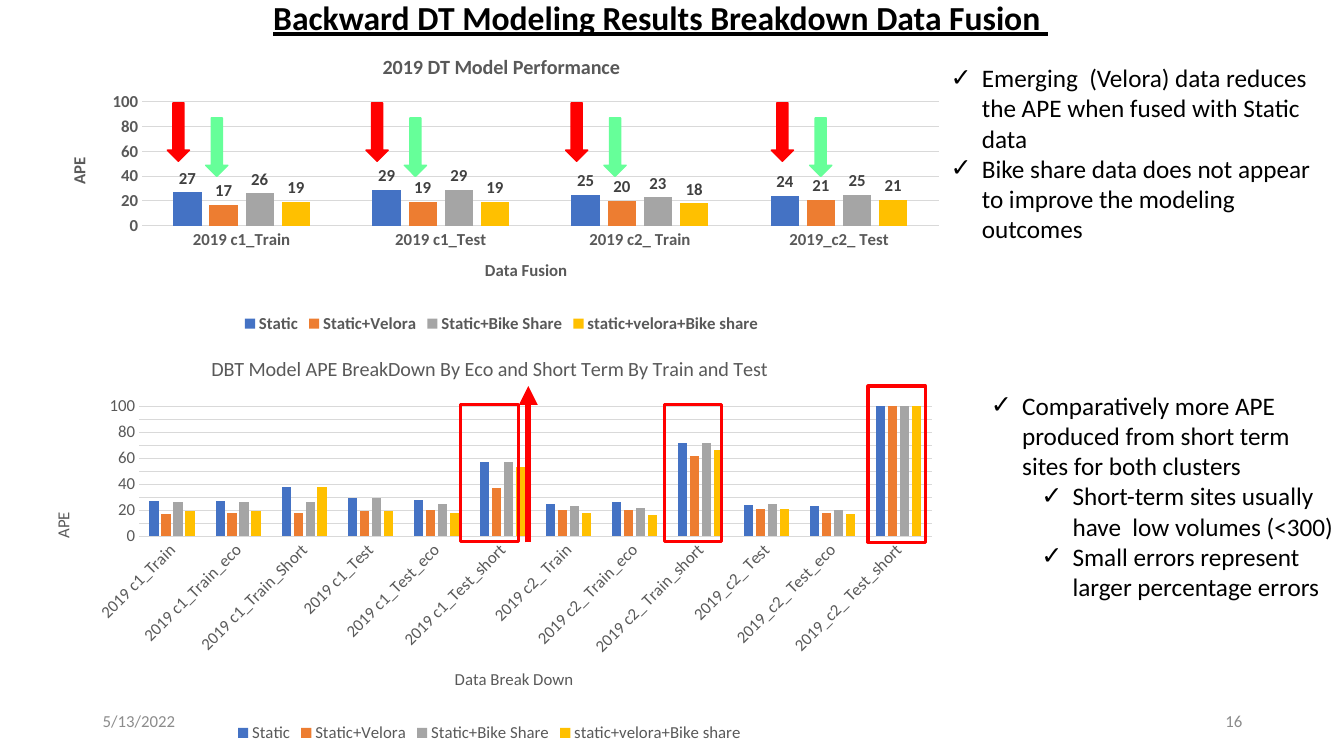
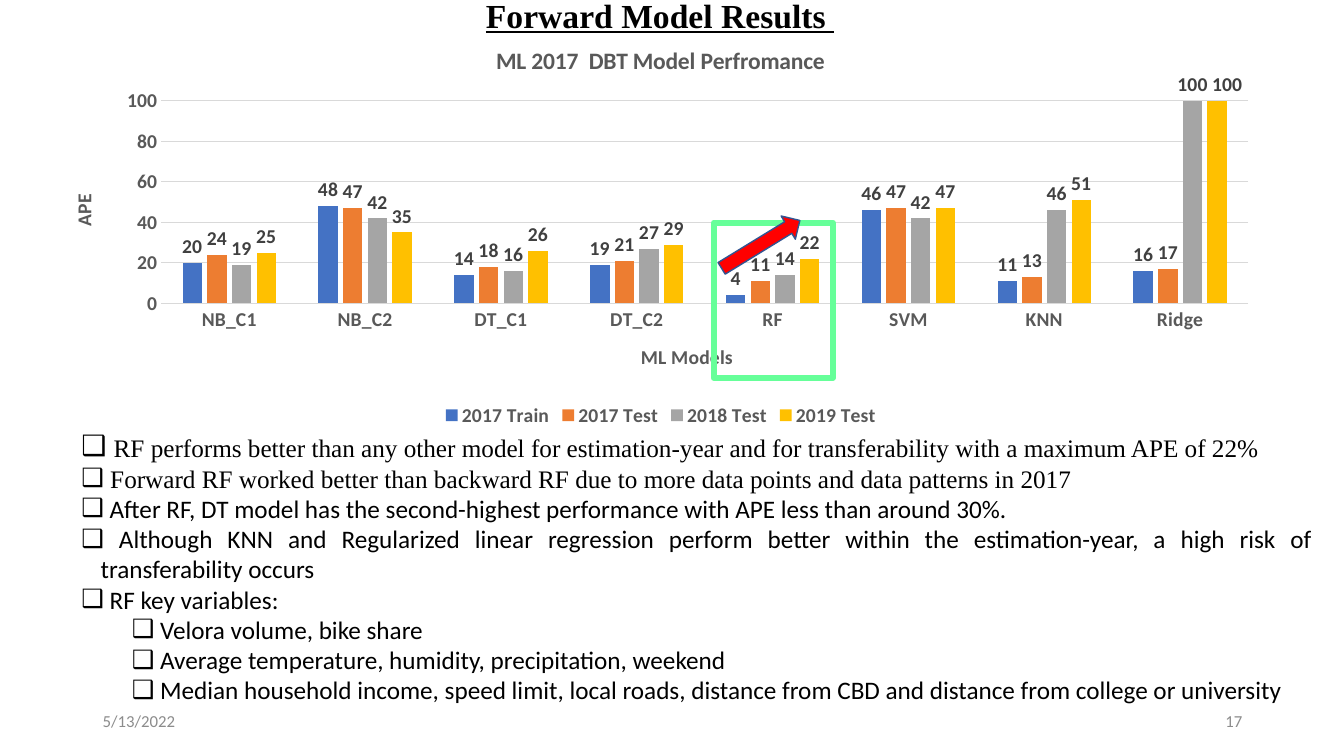
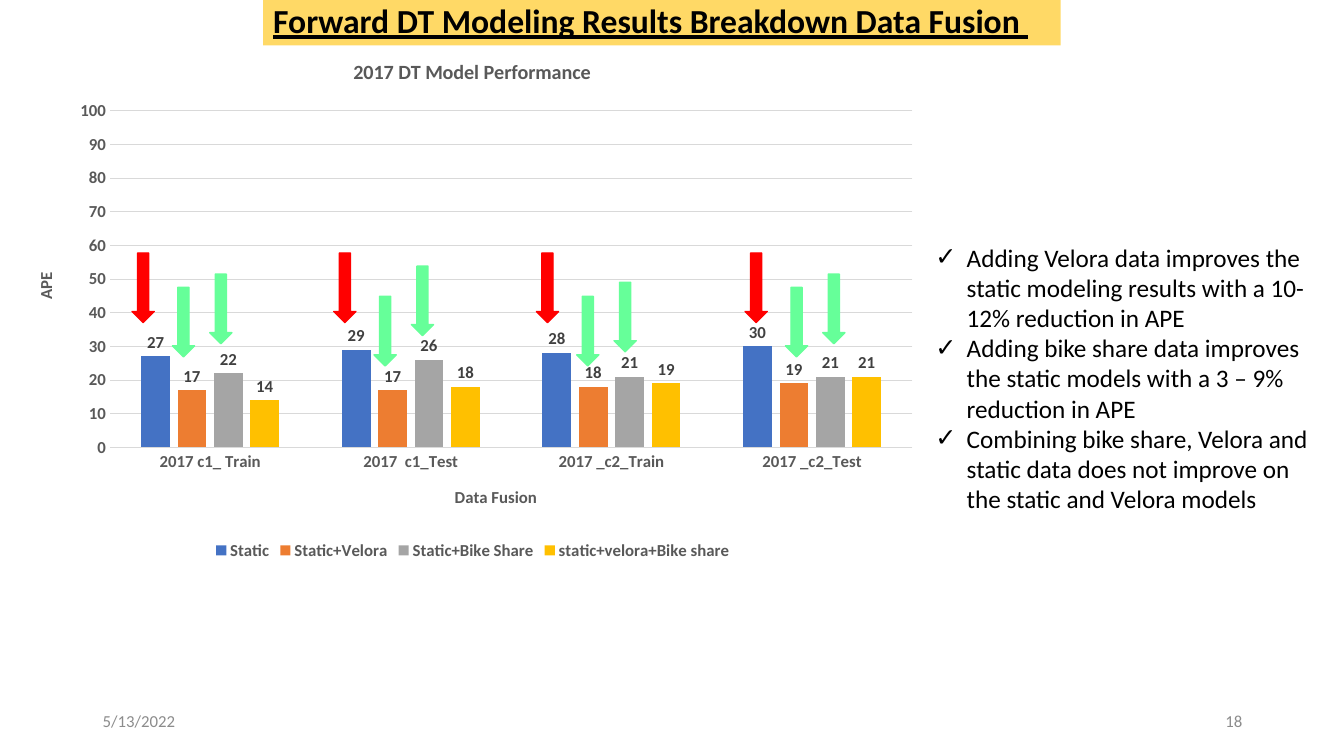
import dataclasses
import typing

import lxml.etree
import pptx
import pptx.chart.data
import pptx.dml.color
import pptx.enum.chart
import pptx.enum.shapes
import pptx.enum.text
import pptx.oxml
import pptx.oxml.ns
import pptx.util

Inches = pptx.util.Inches
Pt = pptx.util.Pt
qn = pptx.oxml.ns.qn
Align = pptx.enum.text.PP_ALIGN
Preset = pptx.enum.shapes.MSO_SHAPE
OUTSIDE_END = pptx.enum.chart.XL_LABEL_POSITION.OUTSIDE_END


@dataclasses.dataclass(frozen=True)
class Theme:
    ink: str = "000000"
    footer: str = "8C8C8C"
    axis: str = "595959"
    label: str = "404040"
    grid: str = "D9D9D9"
    red: str = "FF0000"
    green: str = "66FF99"
    navy: str = "325491"
    band: str = "FFD966"
    series: tuple[str, ...] = ("4472C4", "ED7D31", "A5A5A5", "FFC000")
    sans: str = "Calibri"
    serif: str = "Times New Roman"
    title_size: float = 24
    body_size: float = 18
    lead_size: float = 20
    small_size: float = 12
    chart_title_scale: float = 1.2


THEME = Theme()


class Area(typing.NamedTuple):
    left: float
    top: float
    width: float
    height: float


class Spot(typing.NamedTuple):
    left: float
    top: float


class Bullet(typing.NamedTuple):
    text: str
    level: int = 0
    font: str = THEME.sans
    lead: str = ""


class LabelShift(typing.NamedTuple):
    series: int
    point: int
    right: float


@dataclasses.dataclass(frozen=True)
class ColumnChart:
    area: Area
    plot: Area
    title: str
    title_at: Spot
    category_title: str
    category_title_at: Spot
    value_title_at: Spot
    categories: tuple[str, ...]
    series: dict[str, tuple[int, ...]]
    major_unit: int
    size: float = THEME.small_size
    bold: bool = True
    labels: bool = True
    slanted: bool = False
    label_shifts: tuple[LabelShift, ...] = ()


def rgb(code: str) -> pptx.dml.color.RGBColor:
    return pptx.dml.color.RGBColor.from_string(code)


def lengths(area: Area) -> list[int]:
    return [Inches(value) for value in area]


def style_font(font, *, size: float, color: str, name: str = THEME.sans,
               bold: bool = False, underline: bool = False) -> None:
    font.size = Pt(size)
    font.name = name
    font.bold = bold
    font.underline = underline
    font.color.rgb = rgb(color)


def add_span(para, text: str, **format) -> None:
    span = para.add_run()
    span.text = text
    style_font(span.font, **format)


def prepare_frame(frame, anchor=pptx.enum.text.MSO_ANCHOR.TOP) -> None:
    frame.word_wrap = True
    frame.auto_size = pptx.enum.text.MSO_AUTO_SIZE.NONE
    frame.vertical_anchor = anchor


def add_text(page, area: Area, text: str, *, align=Align.LEFT, **format) -> None:
    box = page.shapes.add_textbox(*lengths(area))
    prepare_frame(box.text_frame, pptx.enum.text.MSO_ANCHOR.MIDDLE)
    para = box.text_frame.paragraphs[0]
    para.alignment = align
    add_span(para, text, **format)


def add_page(deck, number: int, title: str, area: Area, *,
             font: str = THEME.sans, band: str | None = None):
    page = deck.slides.add_slide(deck.slide_layouts[5])
    box = page.shapes.title
    box.left, box.top, box.width, box.height = lengths(area)
    prepare_frame(box.text_frame)
    if band:
        box.fill.solid()
        box.fill.fore_color.rgb = rgb(band)
    para = box.text_frame.paragraphs[0]
    para.alignment = Align.LEFT
    add_span(para, title, size=THEME.title_size, color=THEME.ink, name=font,
             bold=True, underline=True)
    for left, text, align in ((0.92, "5/13/2022", Align.LEFT),
                              (9.42, str(number), Align.RIGHT)):
        add_text(page, Area(left, 6.95, 3, 0.4), text, align=align,
                 size=THEME.small_size, color=THEME.footer)
    return page


def add_bullets(page, area: Area, bullets: list[Bullet], *, mark: str = "✓",
                indent: float = 0.31, align=Align.LEFT) -> None:
    box = page.shapes.add_textbox(*lengths(area))
    frame = box.text_frame
    prepare_frame(frame)
    for index, bullet in enumerate(bullets):
        para = frame.add_paragraph() if index else frame.paragraphs[0]
        para.alignment = align
        para.level = bullet.level
        properties = para._p.get_or_add_pPr()
        properties.set("marL", str(Inches(indent + bullet.level * 0.5)))
        properties.set("indent", str(Inches(-indent)))
        lxml.etree.SubElement(properties, qn("a:buFont")).set("typeface", THEME.sans)
        lxml.etree.SubElement(properties, qn("a:buChar")).set("char", mark)
        if bullet.lead:
            add_span(para, bullet.lead, size=THEME.lead_size, color=THEME.ink,
                     name=bullet.font)
        add_span(para, bullet.text, size=THEME.body_size, color=THEME.ink,
                 name=bullet.font)


def add_mark(page, preset, area: Area, *, line: str, fill: str | None = None,
             weight: float = 1, rotation: float = 0) -> None:
    shape = page.shapes.add_shape(preset, *lengths(area))
    shape.shadow.inherit = False
    shape.rotation = rotation
    shape.line.color.rgb = rgb(line)
    shape.line.width = Pt(weight)
    if fill:
        shape.fill.solid()
        shape.fill.fore_color.rgb = rgb(fill)
    else:
        shape.fill.background()


def add_down_arrows(page, spots: list[Spot], height: float, color: str) -> None:
    for spot in spots:
        add_mark(page, Preset.DOWN_ARROW, Area(*spot, 0.22, height),
                 line=color, fill=color)


def add_arrow(page, start: Spot, end: Spot, *, color: str, weight: float) -> None:
    arrow = page.shapes.add_connector(
        pptx.enum.shapes.MSO_CONNECTOR.STRAIGHT,
        *[Inches(value) for value in (*start, *end)])
    arrow.line.color.rgb = rgb(color)
    arrow.line.width = Pt(weight)
    lxml.etree.SubElement(arrow.line._get_or_add_ln(), qn("a:tailEnd")).set("type", "triangle")
    lxml.etree.SubElement(arrow._element.spPr, qn("a:effectLst"))


def make_layout(settings: dict[str, str | float]):
    layout = pptx.oxml.parse_xml(
        '<c:layout xmlns:c="http://schemas.openxmlformats.org/drawingml/2006/chart">'
        "<c:manualLayout/></c:layout>")
    for tag, value in settings.items():
        text = value if isinstance(value, str) else f"{value:.4f}"
        lxml.etree.SubElement(layout[0], qn(f"c:{tag}")).set("val", text)
    return layout


def place_layout(chart_area: Area, place: Area | Spot):
    settings = {"xMode": "edge", "yMode": "edge",
                "x": (place.left - chart_area.left) / chart_area.width,
                "y": (place.top - chart_area.top) / chart_area.height}
    if isinstance(place, Area):
        settings = {"layoutTarget": "inner", **settings,
                    "w": place.width / chart_area.width,
                    "h": place.height / chart_area.height}
    return make_layout(settings)


def drop_layout(parent) -> None:
    for layout in parent.findall(qn("c:layout")):
        parent.remove(layout)


def place_title(title, text: str, chart_area: Area, spot: Spot, **format) -> None:
    add_span(title.text_frame.paragraphs[0], text, color=THEME.axis, **format)
    element = title._element
    drop_layout(element)
    element.find(qn("c:tx")).addnext(place_layout(chart_area, spot))


def style_axis(axis, data: ColumnChart) -> None:
    axis.major_tick_mark = pptx.enum.chart.XL_TICK_MARK.NONE
    axis.minor_tick_mark = pptx.enum.chart.XL_TICK_MARK.NONE
    style_font(axis.tick_labels.font, size=data.size, color=THEME.axis, bold=data.bold)


def shift_label(plot, data: ColumnChart, shift: LabelShift) -> None:
    series = plot.series[shift.series]
    label = series.points[shift.point].data_label
    style_font(label.font, size=data.size, color=THEME.label, bold=True)
    label.position = OUTSIDE_END
    index = next(series._element.iter(qn("c:dLbl"))).find(qn("c:idx"))
    index.addnext(make_layout({"x": shift.right / data.area.width, "y": 0}))


def add_column_chart(page, data: ColumnChart) -> None:
    source = pptx.chart.data.CategoryChartData()
    source.categories = data.categories
    for name, values in data.series.items():
        source.add_series(name, values)
    chart = page.shapes.add_chart(
        pptx.enum.chart.XL_CHART_TYPE.COLUMN_CLUSTERED, *lengths(data.area), source).chart
    style_font(chart.font, size=data.size, color=THEME.ink, bold=data.bold)
    space = chart._chartSpace
    space.find(qn("c:chart")).addnext(pptx.oxml.parse_xml(
        '<c:spPr xmlns:c="http://schemas.openxmlformats.org/drawingml/2006/chart"'
        ' xmlns:a="http://schemas.openxmlformats.org/drawingml/2006/main">'
        "<a:noFill/><a:ln><a:noFill/></a:ln></c:spPr>"))

    category, value = chart.category_axis, chart.value_axis
    for axis in (category, value):
        style_axis(axis, data)
    category.format.line.color.rgb = rgb(THEME.grid)
    category.format.line.width = Pt(0.75)
    if data.slanted:
        category._element.find(f"{qn('c:txPr')}/{qn('a:bodyPr')}").set("rot", "-2700000")
    value.format.line.fill.background()
    value.minimum_scale = 0
    value.maximum_scale = 100
    value.major_unit = data.major_unit
    value.has_major_gridlines = True
    value.major_gridlines.format.line.color.rgb = rgb(THEME.grid)
    value.major_gridlines.format.line.width = Pt(0.75)

    chart.has_title = True
    for title, text, spot, scale in (
            (chart.chart_title, data.title, data.title_at, THEME.chart_title_scale),
            (category.axis_title, data.category_title, data.category_title_at, 1),
            (value.axis_title, "APE", data.value_title_at, 1)):
        place_title(title, text, data.area, spot, size=data.size * scale, bold=data.bold)
    turn = next(value.axis_title._element.iter(qn("a:bodyPr")))
    turn.set("rot", "-5400000")
    turn.set("vert", "horz")

    chart.has_legend = True
    chart.legend.position = pptx.enum.chart.XL_LEGEND_POSITION.BOTTOM
    chart.legend.include_in_layout = False
    style_font(chart.legend.font, size=data.size, color=THEME.axis, bold=data.bold)

    plot = chart.plots[0]
    plot.gap_width = 219
    plot.overlap = -27
    plot.vary_by_categories = False
    for series, color in zip(plot.series, THEME.series):
        series.format.fill.solid()
        series.format.fill.fore_color.rgb = rgb(color)
        if data.labels:
            labels = series.data_labels
            labels.show_value = True
            labels.position = OUTSIDE_END
            labels.number_format = "#,##0"
            labels.number_format_is_linked = False
            style_font(labels.font, size=data.size, color=THEME.label, bold=True)
    for shift in data.label_shifts:
        shift_label(plot, data, shift)
    plot_area = space.find(f"{qn('c:chart')}/{qn('c:plotArea')}")
    drop_layout(plot_area)
    plot_area.insert(0, place_layout(data.area, data.plot))


FUSIONS = ("Static", "Static+Velora", "Static+Bike Share", "static+velora+Bike share")
YEARS = ("2017 Train", "2017 Test", "2018 Test", "2019 Test")


def build_backward_fusion(deck) -> None:
    page = add_page(deck, 16, "Backward DT Modeling Results Breakdown Data Fusion ",
                    Area(2.61, -0.08, 7.96, 0.5))
    add_column_chart(page, ColumnChart(
        area=Area(0.3, 3.35, 9.11, 4.06), plot=Area(1.38, 4.03, 7.86, 1.29),
        title="DBT Model APE BreakDown By Eco and Short Term By Train and Test",
        title_at=Spot(2.06, 3.49),
        category_title="Data Break Down", category_title_at=Spot(4.48, 6.59),
        value_title_at=Spot(0.48, 5.05),
        categories=("2019 c1_Train", "2019 c1_Train_eco", "2019 c1_Train_Short",
                    "2019 c1_Test", "2019 c1_Test_eco", "2019 c1_Test_short",
                    "2019 c2_ Train", "2019 c2_ Train_eco", "2019 c2_ Train_short",
                    "2019_c2_ Test", "2019_c2_ Test_eco", "2019_c2_ Test_short"),
        series=dict(zip(FUSIONS, (
            (27, 27, 38, 29, 28, 57, 25, 26, 72, 24, 23, 100),
            (17, 18, 18, 19, 20, 37, 20, 20, 62, 21, 18, 100),
            (26, 26, 26, 29, 25, 57, 23, 22, 72, 25, 20, 100),
            (19, 19, 38, 19, 18, 53, 18, 16, 66, 21, 17, 100)))),
        major_unit=10, bold=False, labels=False, slanted=True))
    for left, top, height in ((4.57, 4.01, 1.36), (6.59, 4.01, 1.36), (8.61, 3.83, 1.55)):
        add_mark(page, Preset.RECTANGLE, Area(left, top, 0.57, height),
                 line=THEME.red, weight=2.25)
    add_arrow(page, Spot(5.24, 5.38), Spot(5.24, 3.83), color=THEME.red, weight=4.5)
    add_column_chart(page, ColumnChart(
        area=Area(0.46, 0.38, 9.03, 2.97), plot=Area(1.41, 1.01, 7.9, 1.23),
        title="2019 DT Model Performance", title_at=Spot(3.76, 0.49),
        category_title="Data Fusion", category_title_at=Spot(4.78, 2.54),
        value_title_at=Spot(0.64, 1.53),
        categories=("2019 c1_Train", "2019 c1_Test", "2019 c2_ Train", "2019_c2_ Test"),
        series=dict(zip(FUSIONS, ((27, 29, 25, 24), (17, 19, 20, 21),
                                  (26, 29, 23, 25), (19, 19, 18, 21)))),
        major_unit=20))
    lefts = (1.66, 3.63, 5.61, 7.65)
    add_down_arrows(page, [Spot(left, 1.02) for left in lefts], 0.58, THEME.red)
    add_down_arrows(page, [Spot(left + 0.38, 1.17) for left in lefts], 0.58, THEME.green)
    add_bullets(page, Area(9.33, 0.57, 4.01, 1.92), [
        Bullet("Emerging  (Velora) data reduces the APE when fused with Static data"),
        Bullet("Bike share data does not appear to improve the modeling outcomes")])
    add_bullets(page, Area(9.73, 3.82, 3.6, 2.52), [
        Bullet("Comparatively more APE produced from short term sites for both clusters"),
        Bullet("Short-term sites usually have  low volumes (<300)", 1),
        Bullet("Small errors represent larger percentage errors", 1)])


def build_forward_results(deck) -> None:
    page = add_page(deck, 17, "Forward Model Results ", Area(4.72, -0.1, 3.69, 0.5),
                    font=THEME.serif)
    add_bullets(page, Area(0.71, 4.21, 12.41, 2.86), [
        Bullet("RF performs better than any other model for estimation-year and for "
               "transferability with a maximum APE of 22%", font=THEME.serif, lead=" "),
        Bullet(" Forward RF worked better than backward RF due to more data points and "
               "data patterns in 2017", font=THEME.serif),
        Bullet(" After RF, DT model has the second-highest performance with APE less "
               "than around 30%."),
        Bullet(" Although KNN and Regularized linear regression perform better within "
               "the estimation-year, a high risk of transferability occurs"),
        Bullet(" RF key variables:"),
        Bullet(" Velora volume, bike share", 1),
        Bullet(" Average temperature, humidity, precipitation, weekend", 1),
        Bullet(" Median household income, speed limit, local roads, distance from CBD "
               "and distance from college or university", 1)],
        mark="❑", indent=0.19, align=Align.JUSTIFY)
    add_column_chart(page, ColumnChart(
        area=Area(0.48, 0.28, 12.15, 4), plot=Area(1.6, 1, 10.78, 2.01),
        title="ML 2017  DBT Model Perfromance", title_at=Spot(4.88, 0.4),
        category_title="ML Models", category_title_at=Spot(6.32, 3.37),
        value_title_at=Spot(0.66, 1.89),
        categories=("NB_C1", "NB_C2", "DT_C1", "DT_C2", "RF", "SVM", "KNN", "Ridge"),
        series=dict(zip(YEARS, (
            (20, 48, 14, 19, 4, 46, 11, 16), (24, 47, 18, 21, 11, 47, 13, 17),
            (19, 42, 16, 27, 14, 42, 46, 100), (25, 35, 26, 29, 22, 47, 51, 100)))),
        major_unit=20, size=14, label_shifts=(LabelShift(3, 7, 0.1),)))
    add_mark(page, Preset.RECTANGLE, Area(7.08, 2.21, 1.18, 1.54),
             line=THEME.green, weight=4.5)
    add_mark(page, Preset.RIGHT_ARROW, Area(7.09, 2.29, 0.91, 0.27),
             line=THEME.navy, fill=THEME.red, rotation=328.5)


def build_forward_fusion(deck) -> None:
    page = add_page(deck, 18, "Forward DT Modeling Results Breakdown Data Fusion ",
                    Area(2.61, -0.05, 7.91, 0.5), band=THEME.band)
    add_column_chart(page, ColumnChart(
        area=Area(0.15, 0.38, 9.08, 5.22), plot=Area(1.09, 1.1, 7.96, 3.34),
        title="2017 DT Model Performance", title_at=Spot(3.47, 0.54),
        category_title="Data Fusion", category_title_at=Spot(4.48, 4.79),
        value_title_at=Spot(0.31, 2.67),
        categories=("2017 c1_ Train", "2017  c1_Test", "2017 _c2_Train", "2017 _c2_Test"),
        series=dict(zip(FUSIONS, ((27, 29, 28, 30), (17, 17, 18, 19),
                                  (22, 26, 21, 21), (14, 18, 19, 21)))),
        major_unit=10))
    add_bullets(page, Area(9.18, 2.35, 4.01, 2.83), [
        Bullet("Adding Velora data improves the static modeling results with a 10-12% "
               "reduction in APE"),
        Bullet("Adding bike share data improves the static models with a 3 – 9% "
               "reduction in APE"),
        Bullet("Combining bike share, Velora and static data does not improve on the "
               "static and Velora models")])
    lefts = (1.31, 3.31, 5.32, 7.39)
    add_down_arrows(page, [Spot(left, 2.51) for left in lefts], 0.69, THEME.red)
    for offset, tops in ((0.4, (2.85, 2.94, 2.94, 2.85)), (0.77, (2.72, 2.64, 2.8, 2.72))):
        add_down_arrows(page, [Spot(left + offset, top) for left, top in zip(lefts, tops)],
                        0.69, THEME.green)


def main() -> None:
    deck = pptx.Presentation()
    deck.slide_width = Inches(13.33)
    deck.slide_height = Inches(7.5)
    for build in (build_backward_fusion, build_forward_results, build_forward_fusion):
        build(deck)
    deck.save("out.pptx")


if __name__ == "__main__":
    main()
